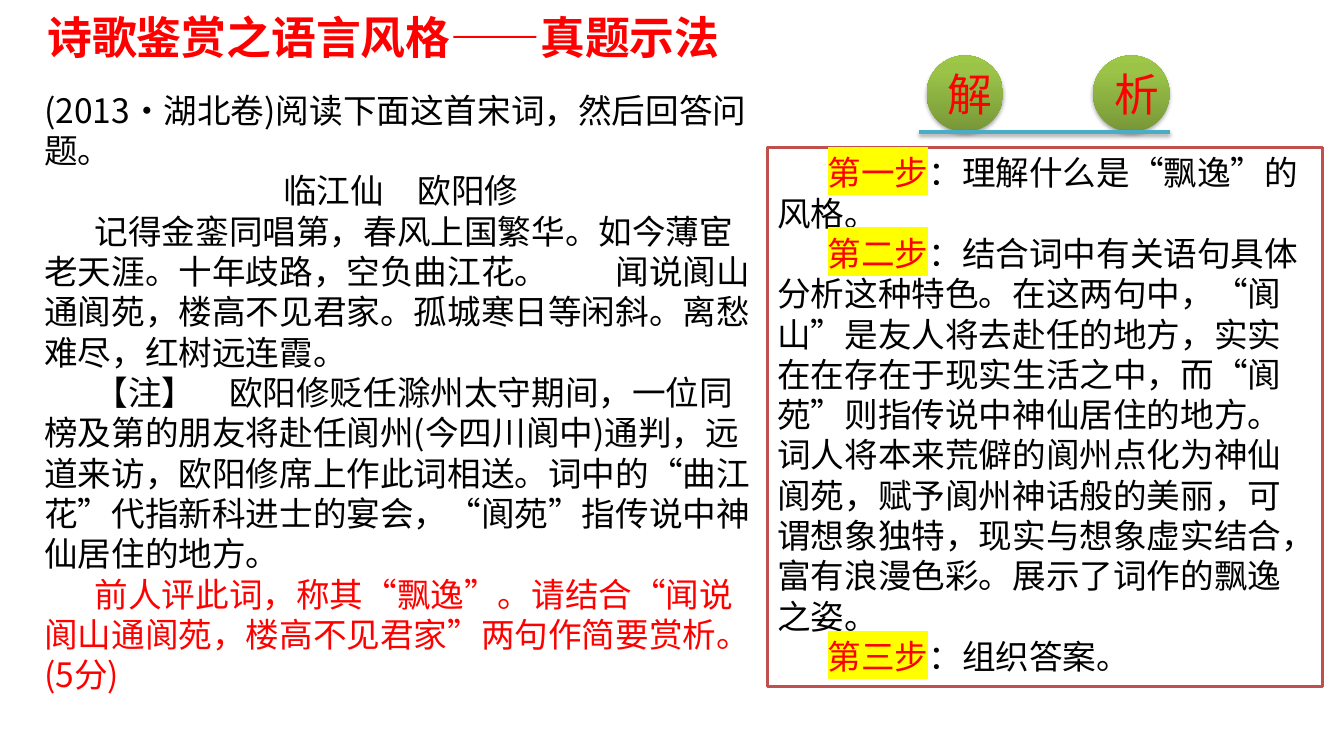
from pptx import Presentation
from pptx.dml.color import RGBColor
from pptx.enum.shapes import MSO_CONNECTOR, MSO_SHAPE
from pptx.enum.text import MSO_ANCHOR, MSO_AUTO_SIZE, PP_ALIGN
from pptx.oxml import parse_xml
from pptx.oxml.ns import nsdecls, qn
from pptx.util import Inches, Pt

FONT = "Noto Sans CJK SC"
RED, BLACK, YELLOW = "FF0000", "000000", "FFFF00"

POEM = ("记得金銮同唱第，春风上国繁华。如今薄宦老天涯。十年歧路，空负曲江花。"
        "　　闻说阆山通阆苑，楼高不见君家。孤城寒日等闲斜。离愁难尽，红树远连霞。")
NOTE = ("【注】　欧阳修贬任滁州太守期间，一位同榜及第的朋友将赴任阆州(今四川阆中)通判，"
        "远道来访，欧阳修席上作此词相送。词中的“曲江花”代指新科进士的宴会，"
        "“阆苑”指传说中神仙居住的地方。")
QUESTION = "前人评此词，称其“飘逸”。请结合“闻说阆山通阆苑，楼高不见君家”两句作简要赏析。(5分)"
STEPS = [
    ("第一步", "：理解什么是“飘逸”的风格。"),
    ("第二步", "：结合词中有关语句具体分析这种特色。在这两句中，“阆山”是友人将去赴任的地方，"
               "实实在在存在于现实生活之中，而“阆苑”则指传说中神仙居住的地方。"
               "词人将本来荒僻的阆州点化为神仙阆苑，赋予阆州神话般的美丽，可谓想象独特，"
               "现实与想象虚实结合，富有浪漫色彩。展示了词作的飘逸之姿。"),
    ("第三步", "：组织答案。"),
]


def color(value):
    return RGBColor.from_string(value)


def style_paragraph(paragraph, size, text_color=BLACK, bold=False, align=PP_ALIGN.LEFT, indent=0):
    paragraph.alignment = align
    properties = paragraph._p.get_or_add_pPr()
    properties.set("marL", "0")
    properties.set("indent", str(Inches(indent)))
    font = paragraph.font
    font.name, font.size, font.bold = FONT, Pt(size), bold
    font.color.rgb = color(text_color)
    east_asian = parse_xml(f'<a:ea {nsdecls("a")} typeface="{FONT}"/>')
    properties.find(qn("a:defRPr")).append(east_asian)


def add_highlighted_run(paragraph, text):
    run = paragraph.add_run()
    run.text = text
    run.font.color.rgb = color(RED)
    run._r.get_or_add_rPr().append(parse_xml(
        f'<a:highlight {nsdecls("a")}><a:srgbClr val="{YELLOW}"/></a:highlight>'))


def next_paragraph(frame):
    """Return the empty first paragraph, or a new one after it."""
    first = frame.paragraphs[0]
    return frame.add_paragraph() if first.runs else first


def prepare_frame(shape, anchor=MSO_ANCHOR.TOP, auto_size=MSO_AUTO_SIZE.SHAPE_TO_FIT_TEXT):
    frame = shape.text_frame
    frame.word_wrap = True
    frame.auto_size = auto_size
    frame.vertical_anchor = anchor
    return frame


def add_text(slide, left, top, width, height, paragraphs):
    """Add a text box; paragraphs holds pairs of text and style options."""
    box = slide.shapes.add_textbox(Inches(left), Inches(top), Inches(width), Inches(height))
    frame = prepare_frame(box)
    for text, options in paragraphs:
        paragraph = next_paragraph(frame)
        paragraph.add_run().text = text
        style_paragraph(paragraph, **options)


def add_steps_panel(slide, left, top, width, height):
    panel = slide.shapes.add_shape(
        MSO_SHAPE.RECTANGLE, Inches(left), Inches(top), Inches(width), Inches(height))
    panel.shadow.inherit = False
    panel.fill.solid()
    panel.fill.fore_color.rgb = color("FFFFFF")
    panel.line.color.rgb = color("C0504D")
    panel.line.width = Pt(2)
    frame = prepare_frame(panel)
    for step, explanation in STEPS:
        paragraph = next_paragraph(frame)
        add_highlighted_run(paragraph, step)
        paragraph.add_run().text = explanation
        style_paragraph(paragraph, 24, indent=0.5)


def add_shadow(shape):
    """Append a soft drop shadow; call after fill and line are set."""
    shape._element.spPr.append(parse_xml(
        f'<a:effectLst {nsdecls("a")}>'
        f'<a:outerShdw blurRad="{Pt(3.1)}" dist="{Pt(1.8)}" dir="5400000" rotWithShape="0">'
        f'<a:srgbClr val="{BLACK}"><a:alpha val="35000"/></a:srgbClr>'
        '</a:outerShdw></a:effectLst>'))


def fill_green_gradient(shape):
    shape.fill.gradient()
    shape.fill.gradient_angle = 90
    stop_list = shape._element.spPr.find(qn("a:gradFill")).find(qn("a:gsLst"))
    for stop in list(stop_list):
        stop_list.remove(stop)
    for position, value in ((0, "779737"), (80, "9BC348"), (100, "9DC746")):
        stop_list.append(parse_xml(
            f'<a:gs {nsdecls("a")} pos="{position * 1000}"><a:srgbClr val="{value}"/></a:gs>'))


def add_badge(slide, left, top, size, character):
    badge = slide.shapes.add_shape(
        MSO_SHAPE.OVAL, Inches(left), Inches(top), Inches(size), Inches(size))
    fill_green_gradient(badge)
    badge.line.fill.background()
    add_shadow(badge)
    frame = prepare_frame(badge, MSO_ANCHOR.MIDDLE, MSO_AUTO_SIZE.NONE)
    paragraph = next_paragraph(frame)
    paragraph.add_run().text = character
    style_paragraph(paragraph, 32, RED, align=PP_ALIGN.CENTER)


def add_underline(slide, left, right, y):
    line = slide.shapes.add_connector(
        MSO_CONNECTOR.STRAIGHT, Inches(left), Inches(y), Inches(right), Inches(y))
    line.line.color.rgb = color("4BACC6")
    line.line.width = Pt(3)
    add_shadow(line)


def main():
    presentation = Presentation()
    presentation.slide_width, presentation.slide_height = Inches(13.33), Inches(7.5)
    slide = presentation.slides.add_slide(presentation.slide_layouts[6])

    add_text(slide, 0.37, 0.05, 8.43, 0.64, [
        ("诗歌鉴赏之语言风格——真题示法", dict(size=32, text_color=RED, bold=True))])
    add_text(slide, 0.34, 0.84, 7.27, 6.16, [
        ("(2013·湖北卷)阅读下面这首宋词，然后回答问题。", dict(size=24)),
        ("临江仙　欧阳修", dict(size=24, align=PP_ALIGN.CENTER)),
        (POEM, dict(size=24, indent=0.5)),
        (NOTE, dict(size=24, indent=0.5)),
        (QUESTION, dict(size=24, text_color=RED, indent=0.5)),
    ])
    add_steps_panel(slide, 7.61, 1.46, 5.51, 5.35)
    for left, character in ((9.19, "解"), (10.84, "析")):
        add_badge(slide, left, 0.55, 0.76, character)
    add_underline(slide, 9.11, 11.6, 1.31)

    presentation.save("out.pptx")


if __name__ == "__main__":
    main()
